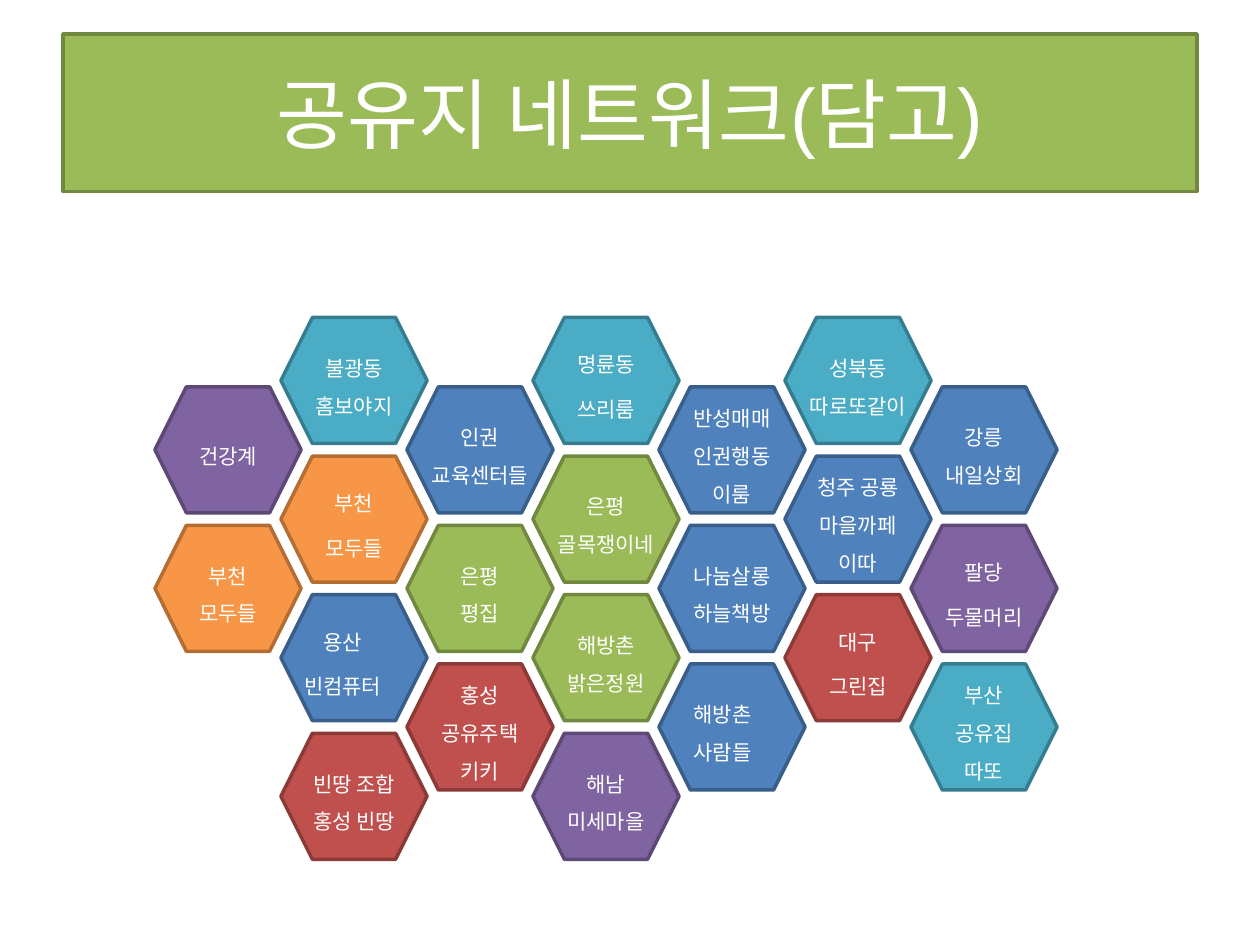
from pptx import Presentation
from pptx.dml.color import RGBColor
from pptx.enum.text import MSO_ANCHOR, PP_ALIGN
from pptx.util import Inches, Pt


def color(hex_value):
    return RGBColor.from_string(hex_value)


def paint(panel, fill, border):
    panel.fill.solid()
    panel.fill.fore_color.rgb = color(fill)
    panel.line.color.rgb = color(border)
    panel.line.width = Pt(2)


green = ("9BBB59", "718840")
blue = ("4F81BD", "395E89")
purple = ("8064A2", "5D4876")
orange = ("F79646", "B46D33")
teal = ("4BACC6", "367D90")
red = ("C0504D", "8C3A38")

members = [
    (0, 1, purple, ["건강계"], None, 0),
    (0, 3, orange, ["부천", "모두들"], None, 0),
    (1, 0, teal, ["불광동", "홈보야지"], None, 0),
    (1, 2, orange, ["부천", "모두들"], 1, 0),
    (1, 4, blue, ["용산", "빈컴퓨터"], 1, 0.18),
    (1, 6, red, ["빈땅 조합\v홍성 빈땅"], None, 0),
    (2, 1, blue, ["인권", "교육센터들"], None, 0),
    (2, 3, green, ["은평\v평집"], None, 0),
    (2, 5, red, ["홍성 공유주택\v키키"], None, 0),
    (3, 0, teal, ["명륜동", "쓰리룸"], 1, 0),
    (3, 2, green, ["은평\v골목쟁이네"], 0, 0),
    (3, 4, green, ["해방촌\v밝은정원"], None, 0),
    (3, 6, purple, ["해남\v미세마을"], None, 0),
    (4, 1, blue, ["반성매매\v인권행동\v이룸"], 0, 0),
    (4, 3, blue, ["나눔살롱\v하늘책방"], 0, 0),
    (4, 5, blue, ["해방촌", "사람들"], None, 0.15),
    (5, 0, teal, ["성북동\v따로또같이"], None, 0),
    (5, 2, blue, ["청주 공룡", "마을까페\v이따"], None, 0),
    (5, 4, red, ["대구", "그린집"], 1, 0),
    (6, 1, blue, ["강릉\v내일상회"], None, 0),
    (6, 3, purple, ["팔당", "두물머리"], 1, 0),
    (6, 5, teal, ["부산", "공유집", "따또"], None, 0),
]

deck = Presentation()
deck.slide_width = Inches(10)
deck.slide_height = Inches(7.5)
slide = deck.slides.add_slide(deck.slide_layouts[5])

heading = slide.shapes.title
heading.left, heading.top = Inches(0.5), Inches(0.27)
heading.width, heading.height = Inches(9), Inches(1.25)
paint(heading, *green)
heading.text_frame.vertical_anchor = MSO_ANCHOR.MIDDLE
heading_line = heading.text_frame.paragraphs[0]
heading_line.alignment = PP_ALIGN.CENTER
heading_run = heading_line.add_run()
heading_run.text = "공유지 네트워크(담고)"
heading_run.font.size = Pt(44)
heading_run.font.name = "Arial"
heading_run.font.color.rgb = color("FFFFFF")

grid_left, grid_top = 1.23, 2.52
column_step, row_step = 1.0, 0.55
cell_width, cell_height, corner = 1.16, 1.0, 0.25
corners = [
    (corner, 0),
    (cell_width - corner, 0),
    (cell_width, cell_height / 2),
    (cell_width - corner, cell_height),
    (corner, cell_height),
]

for column, row, palette, paragraphs, spaced, indent in members:
    left = grid_left + column * column_step
    top = grid_top + row * row_step
    outline = slide.shapes.build_freeform(Inches(left), Inches(top + cell_height / 2))
    outline.add_line_segments(
        [(Inches(left + x), Inches(top + y)) for x, y in corners], close=True
    )
    member = outline.convert_to_shape()
    member.shadow.inherit = False
    paint(member, *palette)

    label = member.text_frame
    label.word_wrap = True
    label.vertical_anchor = MSO_ANCHOR.MIDDLE
    label.margin_left = label.margin_right = Inches(0.18)
    label.margin_top = label.margin_bottom = Inches(0.17)
    for index, wording in enumerate(paragraphs):
        paragraph = label.paragraphs[0] if index == 0 else label.add_paragraph()
        paragraph.alignment = PP_ALIGN.CENTER
        paragraph.line_spacing = 1.5
        paragraph.space_before = Pt(3.9 if index == spaced else 0)
        if index == 0 and indent:
            paragraph._p.get_or_add_pPr().set("marR", str(Inches(indent)))
        for part, line in enumerate(wording.split("\v")):
            if part:
                paragraph.add_line_break()
            run = paragraph.add_run()
            run.text = line
            run.font.size = Pt(12)
            run.font.name = "Arial"
            run.font.color.rgb = color("FFFFFF")

deck.save("out.pptx")
